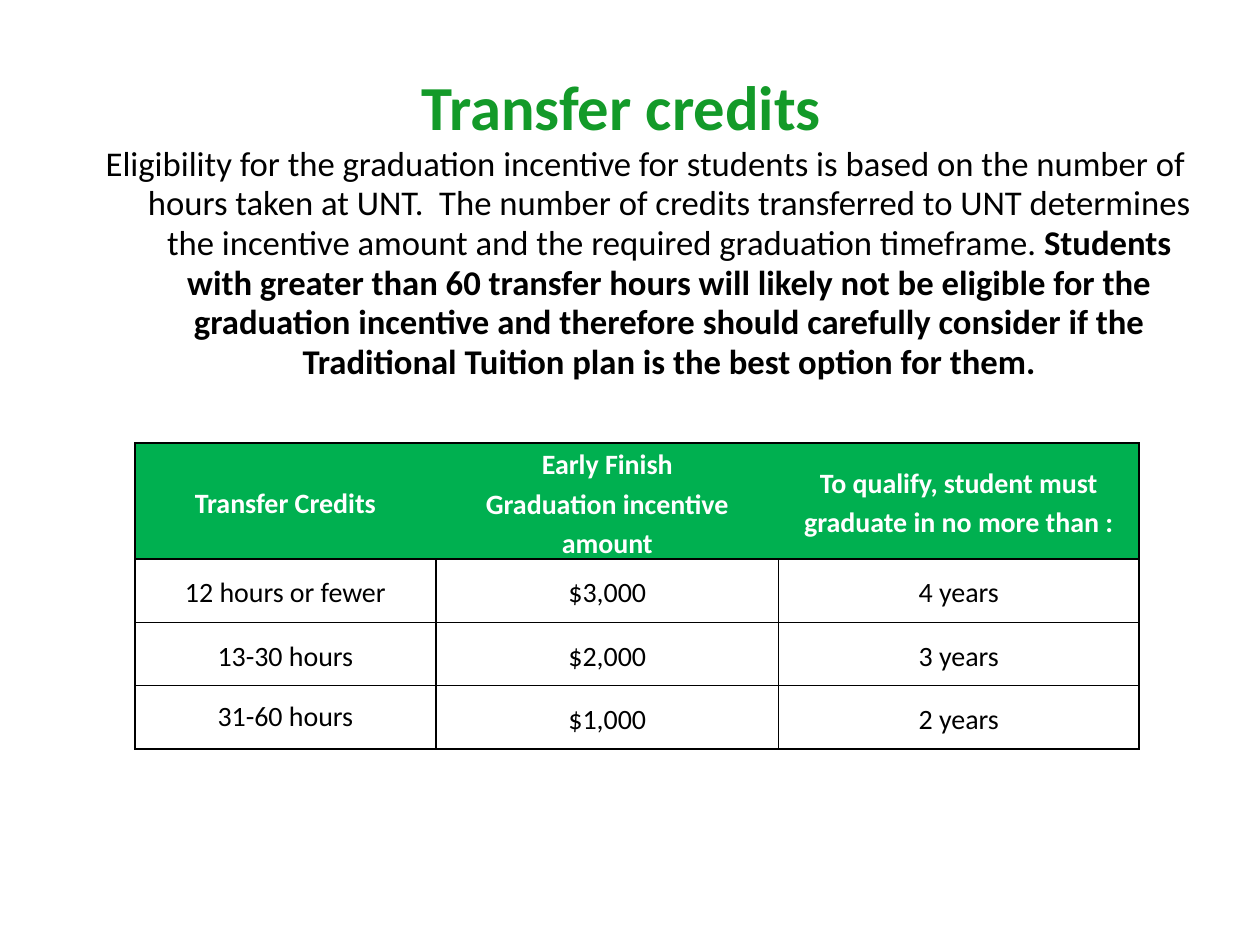
from dataclasses import dataclass

from lxml import etree
from pptx import Presentation
from pptx.dml.color import RGBColor
from pptx.enum.text import MSO_ANCHOR, PP_ALIGN
from pptx.oxml.ns import qn
from pptx.util import Inches, Pt

MID = MSO_ANCHOR.MIDDLE
MIDST = PP_ALIGN.CENTER
WIDE, HIGH = Inches(10), Inches(7.5)


@dataclass(frozen=True)
class Theme:
    face: str = "Calibri"
    title: float = 35.8
    body: float = 19.8
    grid: float = 16
    lead: str = "139A29"
    head: str = "00B050"
    ink: str = "000000"
    pale: str = "FFFFFF"


@dataclass(frozen=True)
class Run:
    text: str
    size: float
    color: str
    bold: bool = False


@dataclass(frozen=True)
class Para:
    runs: tuple[Run, ...]
    space: float
    left: float = 0
    hang: float = 0


@dataclass(frozen=True)
class Area:
    left: float
    top: float
    width: float
    height: float

    def box(self) -> tuple[int, int, int, int]:
        return (int(self.left * WIDE), int(self.top * HIGH),
                int(self.width * WIDE), int(self.height * HIGH))


THEME = Theme()
INTRO = Area(0.036, 0.071, 0.924, 0.384)
TABLE = Area(0.107, 0.469, 0.797, 0.32)
COLS = (0.239, 0.272, 0.286)
ROWS = (0.12, 0.067, 0.067, 0.067)
CELL = dict(margin_left=Inches(0.07), margin_right=Inches(0.07),
            margin_top=0, margin_bottom=0, vertical_anchor=MID)
COPY = (
    Para((Run("Transfer credits", THEME.title, THEME.lead, True),), 0.95),
    Para((
        Run("Eligibility for the graduation incentive for students is based "
            "on the number of hours taken at UNT.  The number of credits "
            "transferred to UNT determines the incentive amount and the "
            "required graduation timeframe. ", THEME.body, THEME.ink),
        Run("Students with greater than 60 transfer hours will likely not be "
            "eligible for the graduation incentive and therefore should "
            "carefully consider if the Traditional Tuition plan is the best "
            "option for them.", THEME.body, THEME.ink, True),
    ), 0.95, 0.76, -0.38),
)
DATA = (
    ("Transfer Credits", "Early Finish\nGraduation incentive amount",
     "To qualify, student must\ngraduate in no more than :"),
    ("12 hours or fewer", "$3,000", "4 years"),
    ("13-30 hours", "$2,000", "3 years"),
    ("31-60 hours", "$1,000", "2 years"),
)


def apply(item, form: dict) -> None:
    for name, value in form.items():
        setattr(item, name, value)


def write(frame, paras: tuple[Para, ...]) -> None:
    for num, para in enumerate(paras):
        line = frame.add_paragraph() if num else frame.paragraphs[0]
        apply(line, dict(alignment=MIDST, line_spacing=para.space,
                         space_before=Pt(0), space_after=Pt(0)))
        if para.hang:
            props = line._p.get_or_add_pPr()
            props.set("marL", str(Inches(para.left)))
            props.set("indent", str(Inches(para.hang)))
        for part in para.runs:
            run = line.add_run()
            run.text = part.text
            apply(run.font, dict(name=THEME.face, size=Pt(part.size),
                                 bold=part.bold))
            run.font.color.rgb = RGBColor.from_string(part.color)


def edge(cell, sides: str) -> None:
    props = cell._tc.get_or_add_tcPr()
    for side in "LRTB":
        line = etree.SubElement(props, qn(f"a:ln{side}"), w=str(Pt(1)))
        if side in sides:
            fill = etree.SubElement(line, qn("a:solidFill"))
            etree.SubElement(fill, qn("a:srgbClr"), val=THEME.ink)
        else:
            etree.SubElement(line, qn("a:noFill"))


def draw_text(slide, area: Area, paras: tuple[Para, ...]) -> None:
    frame = slide.shapes.add_textbox(*area.box()).text_frame
    apply(frame, dict(word_wrap=True, margin_left=0))
    write(frame, paras)


def draw_table(slide, area: Area, data: tuple[tuple[str, ...], ...]) -> None:
    table = slide.shapes.add_table(len(ROWS), len(COLS), *area.box()).table
    for col, share in zip(table.columns, COLS):
        col.width = int(share * WIDE)
    for row, share in zip(table.rows, ROWS):
        row.height = int(share * HIGH)
    last = len(COLS) - 1, len(ROWS) - 1
    for y, texts in enumerate(data):
        for x, text in enumerate(texts):
            cell = table.cell(y, x)
            apply(cell, CELL)
            head = y == 0
            ends = ("L" if x == 0 else "") + ("R" if x == last[0] else "")
            edge(cell, "TB" + (ends if head else "LR"))
            if head:
                cell.fill.solid()
                cell.fill.fore_color.rgb = RGBColor.from_string(THEME.head)
            else:
                cell.fill.background()
            color = THEME.pale if head else THEME.ink
            space = 1.0 if (x, y) == (0, last[1]) else 1.15
            write(cell.text_frame, tuple(
                Para((Run(part, THEME.grid, color, head),), space)
                for part in text.split("\n")))


def main() -> None:
    deck = Presentation()
    apply(deck, dict(slide_width=WIDE, slide_height=HIGH))
    slide = deck.slides.add_slide(deck.slide_layouts[6])
    draw_text(slide, INTRO, COPY)
    draw_table(slide, TABLE, DATA)
    deck.save("out.pptx")


if __name__ == "__main__":
    main()
